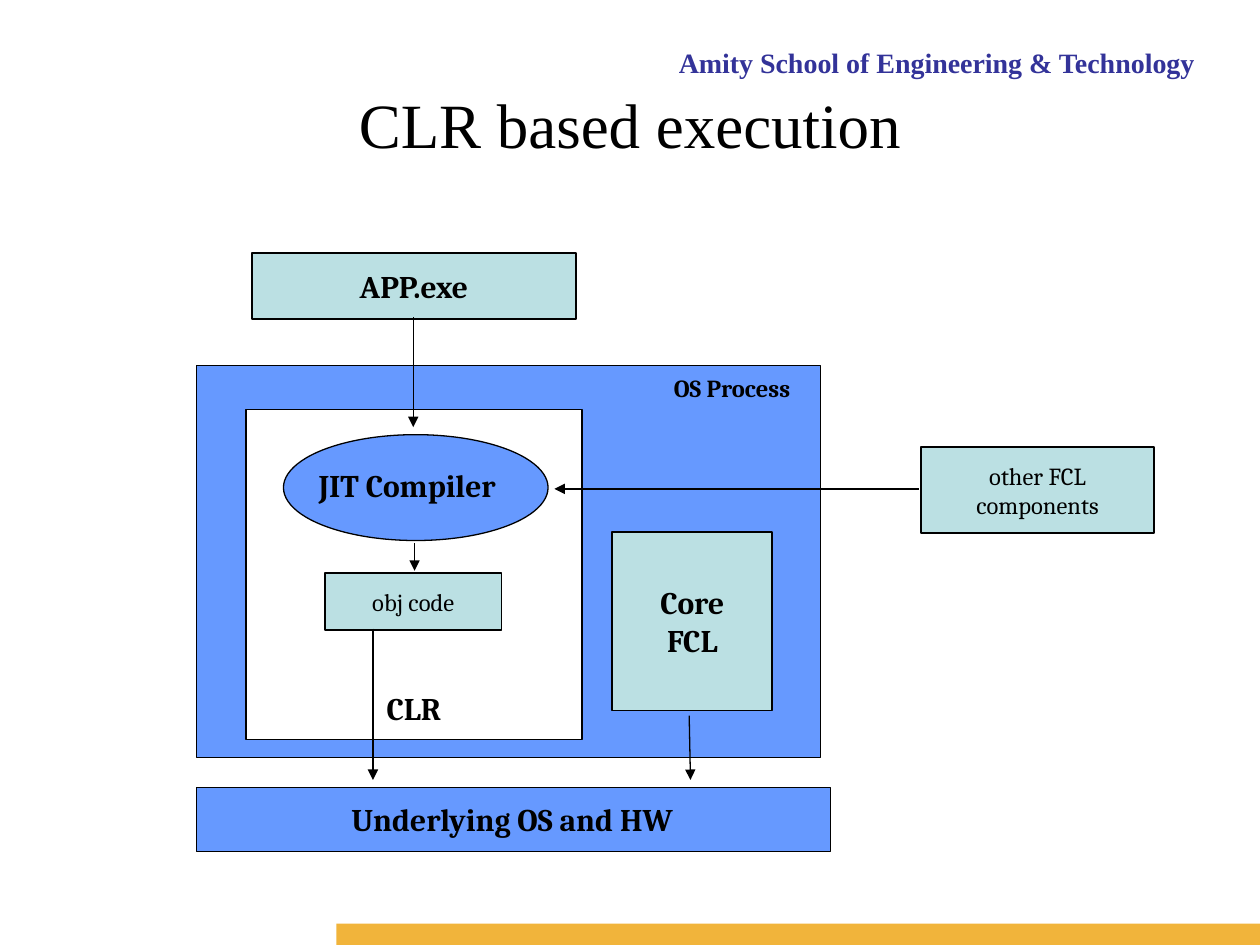
from lxml.etree import SubElement
from pptx import Presentation
from pptx.dml.color import RGBColor
from pptx.enum.shapes import MSO_CONNECTOR, MSO_SHAPE
from pptx.enum.text import MSO_ANCHOR, PP_ALIGN
from pptx.oxml.ns import qn
from pptx.util import Inches, Pt

BLACK, WHITE, NAVY = "000000", "FFFFFF", "333399"
BLUE, TEAL, GOLD = "6699FF", "BBE0E3", "F1B43B"
SERIF, BODY = "Times New Roman", "Cambria"


def color(hex_string):
    return RGBColor.from_string(hex_string)


class Diagram:
    """Draws on a slide with a grid of 100 columns by 75 rows."""

    def __init__(self, presentation):
        self.slide = presentation.slides.add_slide(presentation.slide_layouts[6])
        self.column = presentation.slide_width / 100
        self.row = presentation.slide_height / 75

    def place(self, left, top, width, height):
        return (round(left * self.column), round(top * self.row),
                round(width * self.column), round(height * self.row))

    def set_text(self, shape, text, size, bold, font=BODY, ink=BLACK,
                 align=PP_ALIGN.CENTER, anchor=MSO_ANCHOR.MIDDLE):
        frame = shape.text_frame
        frame.word_wrap = True
        frame.vertical_anchor = anchor
        frame.text = text
        paragraph = frame.paragraphs[0]
        paragraph.alignment = align
        paragraph.font.name = font
        paragraph.font.size = Pt(size)
        paragraph.font.bold = bold
        paragraph.font.color.rgb = color(ink)

    def label(self, box, text, size, bold=True, **style):
        shape = self.slide.shapes.add_textbox(*self.place(*box))
        self.set_text(shape, text, size, bold, **style)

    def block(self, box, fill, kind=MSO_SHAPE.RECTANGLE, line=0.75):
        shape = self.slide.shapes.add_shape(kind, *self.place(*box))
        shape.shadow.inherit = False
        shape.fill.solid()
        shape.fill.fore_color.rgb = color(fill)
        if line:
            shape.line.color.rgb = color(BLACK)
            shape.line.width = Pt(line)
        else:
            shape.line.fill.background()
        return shape

    def text_block(self, box, text, size=18, bold=True, fill=TEAL,
                   anchor=MSO_ANCHOR.MIDDLE):
        shape = self.block(box, fill, line=1)
        frame = shape.text_frame
        frame.margin_left = frame.margin_right = Inches(0.2)
        frame.margin_top = frame.margin_bottom = Inches(0.1)
        self.set_text(shape, text, size, bold, anchor=anchor)

    def arrow(self, start, end):
        connector = self.slide.shapes.add_connector(
            MSO_CONNECTOR.STRAIGHT, *self.place(*start, *end))
        connector.line.color.rgb = color(BLACK)
        connector.line.width = Pt(0.75)
        properties = connector.element.spPr
        SubElement(properties.find(qn("a:ln")), qn("a:tailEnd"), type="triangle")
        SubElement(properties, qn("a:effectLst"))


def main():
    presentation = Presentation()
    presentation.slide_width = Inches(10)
    presentation.slide_height = Inches(7.5)
    diagram = Diagram(presentation)

    # Header, footer bar and title
    diagram.label((45, 3.3, 50.8, 3.3), "Amity School of Engineering & Technology", 16,
                  font=SERIF, ink=NAVY, align=PP_ALIGN.RIGHT)
    diagram.block((26.7, 73.3, 73.3, 1.7), GOLD, line=None)
    diagram.label((5, 5, 90, 9.5), "CLR based execution", 36, bold=False, font=SERIF)

    # Process with the runtime inside, and the code outside it
    diagram.block((15.6, 29, 49.5, 31.1), BLUE)
    diagram.text_block((20, 20.1, 25.7, 5.2), "APP.exe")
    diagram.text_block((73.1, 35.5, 18.5, 6.8), "other FCL components", 14, False)
    diagram.text_block((19.5, 32.5, 26.7, 26.2), "CLR", fill=WHITE,
                       anchor=MSO_ANCHOR.BOTTOM)
    diagram.block((22.5, 34.5, 21, 8.4), BLUE, MSO_SHAPE.OVAL)
    diagram.label((24.3, 36.5, 18, 4), "JIT Compiler", 18, align=PP_ALIGN.LEFT)
    diagram.text_block((25.8, 45.5, 14, 4.5), "obj code", 14, False)
    diagram.label((50, 29.1, 16.2, 3.3), "OS Process", 14)
    diagram.text_block((48.6, 42.2, 12.7, 14.2), "Core FCL")

    # Operating system
    diagram.block((15.6, 62.5, 50.3, 5.1), BLUE)
    diagram.label((26.9, 63, 32.1, 4), "Underlying OS and HW", 18, align=PP_ALIGN.LEFT)

    # Flow of execution
    for start, end in [
        ((72.9, 38.8), (44, 38.8)),
        ((32.9, 43.1), (32.9, 45.3)),
        ((29.6, 49.9), (29.6, 61.9)),
        ((54.7, 56.8), (54.8, 61.9)),
        ((32.8, 25.2), (32.8, 33.9)),
    ]:
        diagram.arrow(start, end)

    presentation.save("out.pptx")


if __name__ == "__main__":
    main()
